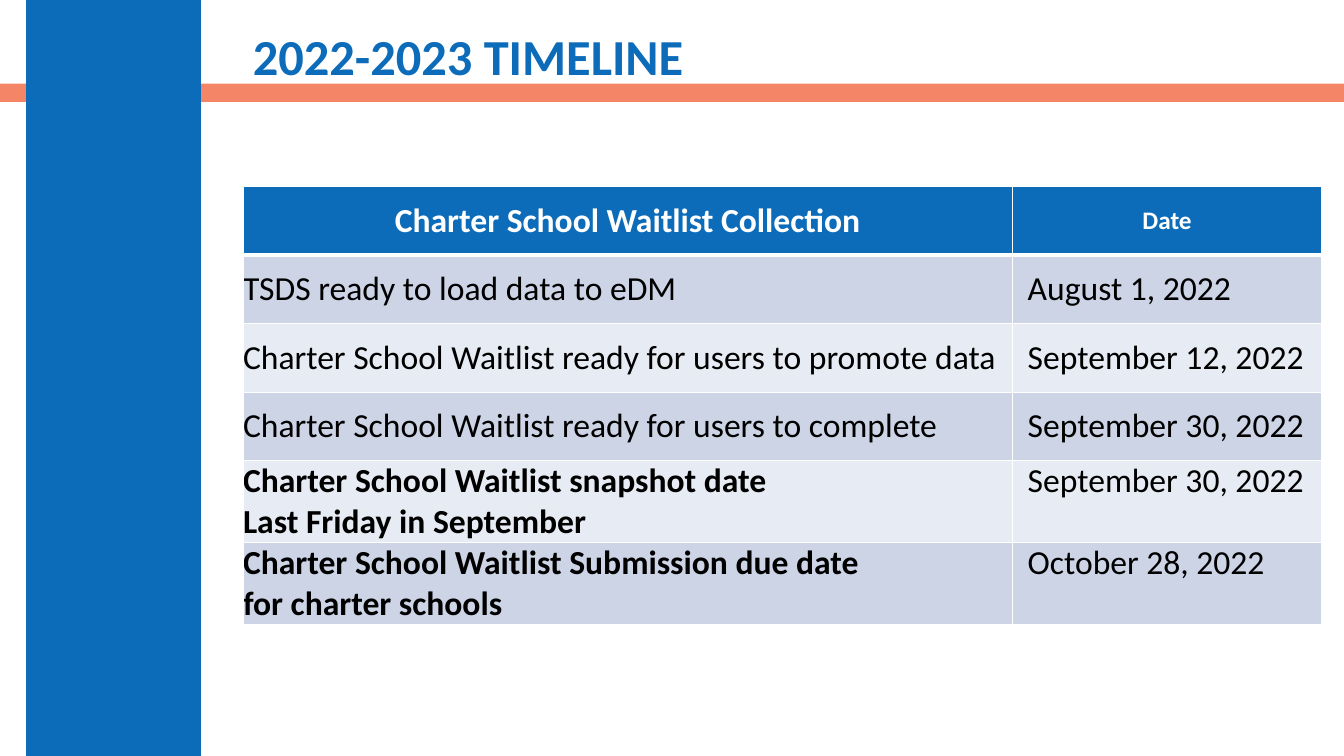
"""Build the 2022-2023 charter school waitlist timeline slide."""
from lxml.etree import SubElement
from pptx import Presentation
from pptx.dml.color import RGBColor
from pptx.enum.shapes import MSO_SHAPE
from pptx.enum.text import MSO_ANCHOR, PP_ALIGN
from pptx.oxml.ns import qn
from pptx.util import Inches, Pt

WIDTH, HEIGHT = Inches(13.33), Inches(7.5)
COLORS = {
    "blue": "0D6CB9",
    "coral": "F16038",
    "band_dark": "CCD4E6",
    "band_light": "E7EBF3",
    "white": "FFFFFF",
    "black": "000000",
}
FONT = "Calibri"
CONTENT_LEFT = 18.08
COLUMN_SHARES = (57.24, 23.03)
ROW_SHARE, TALL_ROW_SHARE = 9.07, 10.85
HEADINGS = (("Charter School Waitlist Collection", 24), ("Date", 18))
MILESTONES = (
    ("TSDS ready to load data to eDM", "August 1, 2022"),
    ("Charter School Waitlist ready for users to promote data", "September 12, 2022"),
    ("Charter School Waitlist ready for users to complete", "September 30, 2022"),
    ("Charter School Waitlist snapshot date\nLast Friday in September", "September 30, 2022"),
    ("Charter School Waitlist Submission due date\nfor charter schools", "October 28, 2022"),
)


def across(percent):
    """Return a share of the slide width."""
    return int(WIDTH * percent / 100)


def down(percent):
    """Return a share of the slide height."""
    return int(HEIGHT * percent / 100)


def rgb(color):
    """Return a named colour."""
    return RGBColor.from_string(COLORS[color])


def style_text(frame, size, color, bold, align=PP_ALIGN.LEFT):
    """Set the font and alignment of every paragraph."""
    for paragraph in frame.paragraphs:
        paragraph.alignment = align
        font = paragraph.font
        font.name, font.size, font.bold = FONT, Pt(size), bold
        font.color.rgb = rgb(color)


def add_band(slide, left, top, width, height, color, opacity=100):
    """Add a plain rectangle, measured in shares of the slide."""
    band = slide.shapes.add_shape(
        MSO_SHAPE.RECTANGLE, across(left), down(top), across(width), down(height))
    band.shadow.inherit = False
    band.fill.solid()
    band.fill.fore_color.rgb = rgb(color)
    band.line.fill.background()
    if opacity < 100:
        tint = band.fill._xPr.find(qn("a:solidFill"))[0]
        SubElement(tint, qn("a:alpha"), val=str(opacity * 1000))


def add_title(slide, text):
    """Add the slide heading."""
    heading = slide.shapes.add_textbox(
        across(CONTENT_LEFT), down(2.4), across(79), down(10.93)).text_frame
    heading.word_wrap = True
    heading.vertical_anchor = MSO_ANCHOR.MIDDLE
    heading.text = text
    heading.paragraphs[0].line_spacing = 0.9
    style_text(heading, 36, "blue", True)


def set_borders(cell, top=1, bottom=1):
    """Draw white borders, with widths in points."""
    properties = cell._tc.get_or_add_tcPr()
    edges = (("a:lnL", 1), ("a:lnR", 1), ("a:lnT", top), ("a:lnB", bottom))
    for position, (edge, points) in enumerate(edges):
        line = SubElement(properties, qn(edge), w=str(Pt(points)))
        SubElement(SubElement(line, qn("a:solidFill")), qn("a:srgbClr"), val=COLORS["white"])
        properties.insert(position, line)


def fill_cell(cell, text, fill, indent=0, anchor=MSO_ANCHOR.MIDDLE):
    """Put text on a coloured cell without margins."""
    cell.text = text
    cell.fill.solid()
    cell.fill.fore_color.rgb = rgb(fill)
    cell.margin_left = across(indent)
    cell.margin_right = cell.margin_top = cell.margin_bottom = 0
    cell.vertical_anchor = anchor


def add_timeline(slide):
    """Add the table of milestones and dates."""
    timeline = slide.shapes.add_table(
        len(MILESTONES) + 1, len(HEADINGS), across(CONTENT_LEFT), down(24.67),
        across(sum(COLUMN_SHARES)), down(ROW_SHARE * (len(MILESTONES) + 1))).table
    for column, share in zip(timeline.columns, COLUMN_SHARES):
        column.width = across(share)
    timeline.rows[0].height = down(ROW_SHARE)
    for index, (heading, size) in enumerate(HEADINGS):
        cell = timeline.cell(0, index)
        fill_cell(cell, heading, "blue")
        set_borders(cell, bottom=3)
        style_text(cell.text_frame, size, "white", True, PP_ALIGN.CENTER)
    for row, (milestone, date) in enumerate(MILESTONES, start=1):
        key_date = "\n" in milestone
        timeline.rows[row].height = down(TALL_ROW_SHARE if key_date else ROW_SHARE)
        band = "band_dark" if row % 2 else "band_light"
        event_cell, date_cell = timeline.cell(row, 0), timeline.cell(row, 1)
        fill_cell(event_cell, milestone, band)
        fill_cell(date_cell, date, band, 1.15,
                  MSO_ANCHOR.TOP if key_date else MSO_ANCHOR.MIDDLE)
        for cell, bold in ((event_cell, key_date), (date_cell, False)):
            set_borders(cell, top=3 if row == 1 else 1)
            style_text(cell.text_frame, 24, "black", bold)


def main():
    """Build and save the slide."""
    deck = Presentation()
    deck.slide_width, deck.slide_height = WIDTH, HEIGHT
    slide = deck.slides.add_slide(deck.slide_layouts[6])
    add_band(slide, 0, 11.07, 100, 2.4, "coral", 76)
    add_band(slide, 1.95, 0, 13, 100, "blue")
    add_title(slide, "2022-2023 TIMELINE")
    add_timeline(slide)
    deck.save("out.pptx")


if __name__ == "__main__":
    main()
